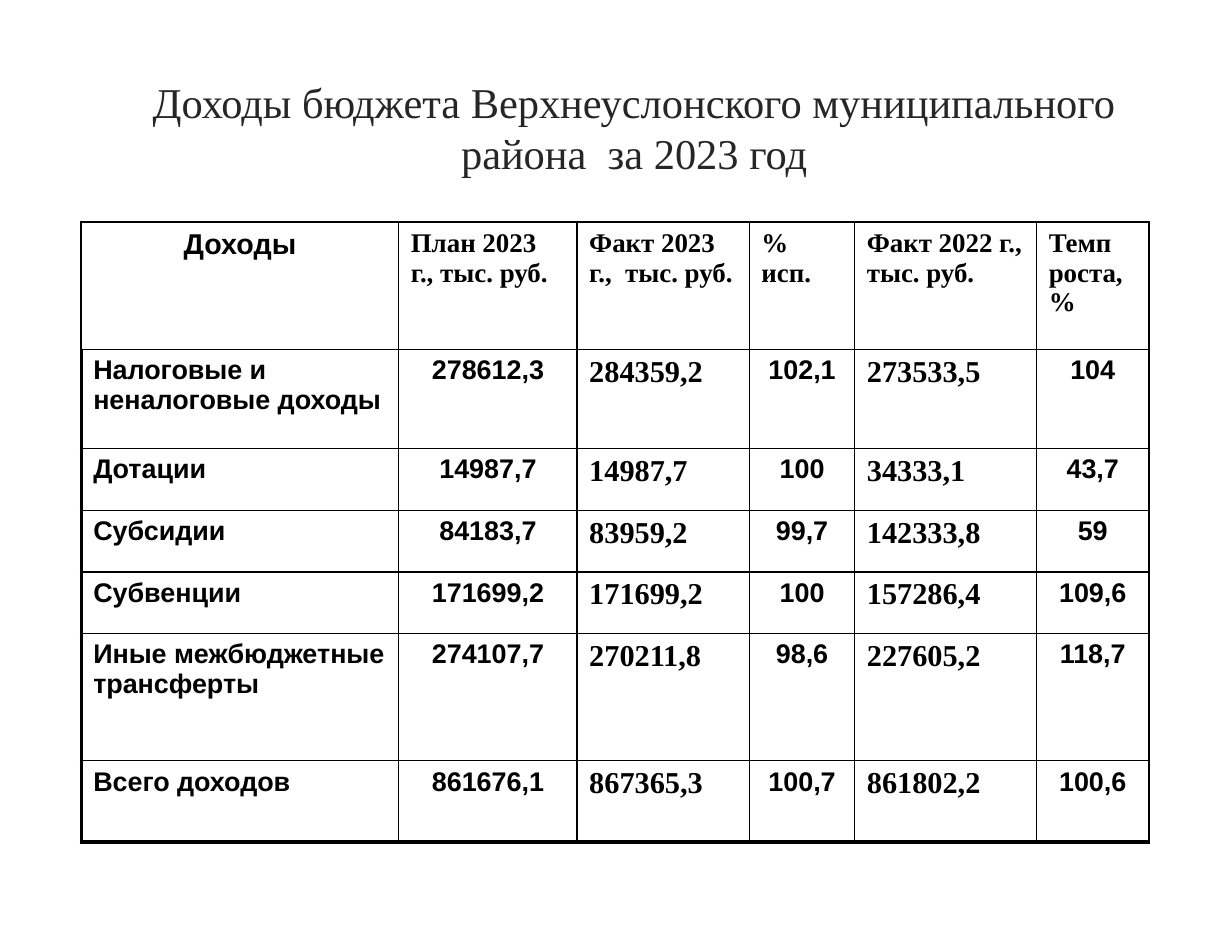
from lxml import etree
from pptx import Presentation
from pptx.dml.color import RGBColor
from pptx.enum.text import MSO_ANCHOR, MSO_AUTO_SIZE, PP_ALIGN
from pptx.oxml.ns import qn
from pptx.util import Pt

LEFT, CENTER = PP_ALIGN.LEFT, PP_ALIGN.CENTER
MIDDLE = MSO_ANCHOR.MIDDLE
NO_FIT = MSO_AUTO_SIZE.NONE
BLACK = RGBColor(0x00, 0x00, 0x00)
WHITE = RGBColor(0xFF, 0xFF, 0xFF)
GRAY = RGBColor(0x26, 0x26, 0x26)
SERIF, SANS = "Times New Roman", "Arial"
THIN, THICK = 1, 2.25

TITLE = "Доходы бюджета Верхнеуслонского муниципального района  за 2023 год"
ROWS = [
    ("Доходы", "План 2023 г., тыс. руб.", "Факт 2023 г.,  тыс. руб.",
     "% исп.", "Факт 2022 г., тыс. руб.", "Темп роста, %"),
    ("Налоговые и неналоговые доходы", "278612,3", "284359,2",
     "102,1", "273533,5", "104"),
    ("Дотации", "14987,7", "14987,7", "100", "34333,1", "43,7"),
    ("Субсидии", "84183,7", "83959,2", "99,7", "142333,8", "59"),
    ("Субвенции", "171699,2", "171699,2", "100", "157286,4", "109,6"),
    ("Иные межбюджетные трансферты", "274107,7", "270211,8",
     "98,6", "227605,2", "118,7"),
    ("Всего доходов", "861676,1", "867365,3", "100,7", "861802,2", "100,6"),
]
WIDTHS = [188.6, 105.9, 102.3, 62.6, 108, 66.6]
HEIGHTS = [75.6, 59, 36.6, 36.6, 36.6, 75.6, 48.2]
FACTS = (2, 4)


def look(row, col):
    """Return font name, size and alignment for a table cell."""
    if row == 0:
        return (SANS, 17, CENTER) if col == 0 else (SERIF, 16, LEFT)
    if col in FACTS:
        return SERIF, 18, LEFT
    return SANS, 16, LEFT if col == 0 else CENTER


class Page:
    def __init__(self, deck):
        self.slide = deck.slides.add_slide(deck.slide_layouts[5])

    def label(self, frame, text, name, size, color, align, bold=False):
        frame.text = text
        frame.word_wrap = True
        para = frame.paragraphs[0]
        para.alignment = align
        font = para.runs[0].font
        font.name, font.size, font.bold = name, Pt(size), bold
        font.color.rgb = color

    def title(self, text, left, top, width, height):
        shape = self.slide.shapes.title
        shape.left, shape.top = Pt(left), Pt(top)
        shape.width, shape.height = Pt(width), Pt(height)
        frame = shape.text_frame
        self.label(frame, text, SERIF, 25.2, GRAY, CENTER)
        frame.auto_size = NO_FIT
        frame.vertical_anchor = MIDDLE

    def border(self, cell, sides):
        """Draw cell borders; sides maps L, R, T, B, in that order, to widths."""
        props = cell._tc.get_or_add_tcPr()
        for spot, (side, width) in enumerate(sides.items()):
            line = etree.Element(qn(f"a:ln{side}"), w=str(Pt(width)))
            fill = etree.SubElement(line, qn("a:solidFill"))
            etree.SubElement(fill, qn("a:srgbClr"), val=str(BLACK))
            props.insert(spot, line)

    def table(self, rows, left, top, widths, heights):
        frame = self.slide.shapes.add_table(
            len(rows), len(widths), Pt(left), Pt(top),
            Pt(sum(widths)), Pt(sum(heights)))
        table = frame.table
        for column, width in zip(table.columns, widths):
            column.width = Pt(width)
        for line, height in zip(table.rows, heights):
            line.height = Pt(height)
        last = len(rows) - 1
        for row, texts in enumerate(rows):
            for col, text in enumerate(texts):
                cell = table.cell(row, col)
                name, size, align = look(row, col)
                self.label(cell.text_frame, text, name, size, BLACK, align, True)
                cell.fill.solid()
                cell.fill.fore_color.rgb = WHITE
                self.border(cell, {
                    "L": THICK if row and col == 0 else THIN,
                    "R": THIN,
                    "T": THIN,
                    "B": THICK if row == last else THIN,
                })


def main():
    deck = Presentation()
    deck.slide_width, deck.slide_height = Pt(731.5), Pt(555.8)
    page = Page(deck)
    page.title(TITLE, 59.8, 41.8, 633.6, 67.7)
    page.table(ROWS, 48.2, 131.8, WIDTHS, HEIGHTS)
    deck.save("out.pptx")


if __name__ == "__main__":
    main()
